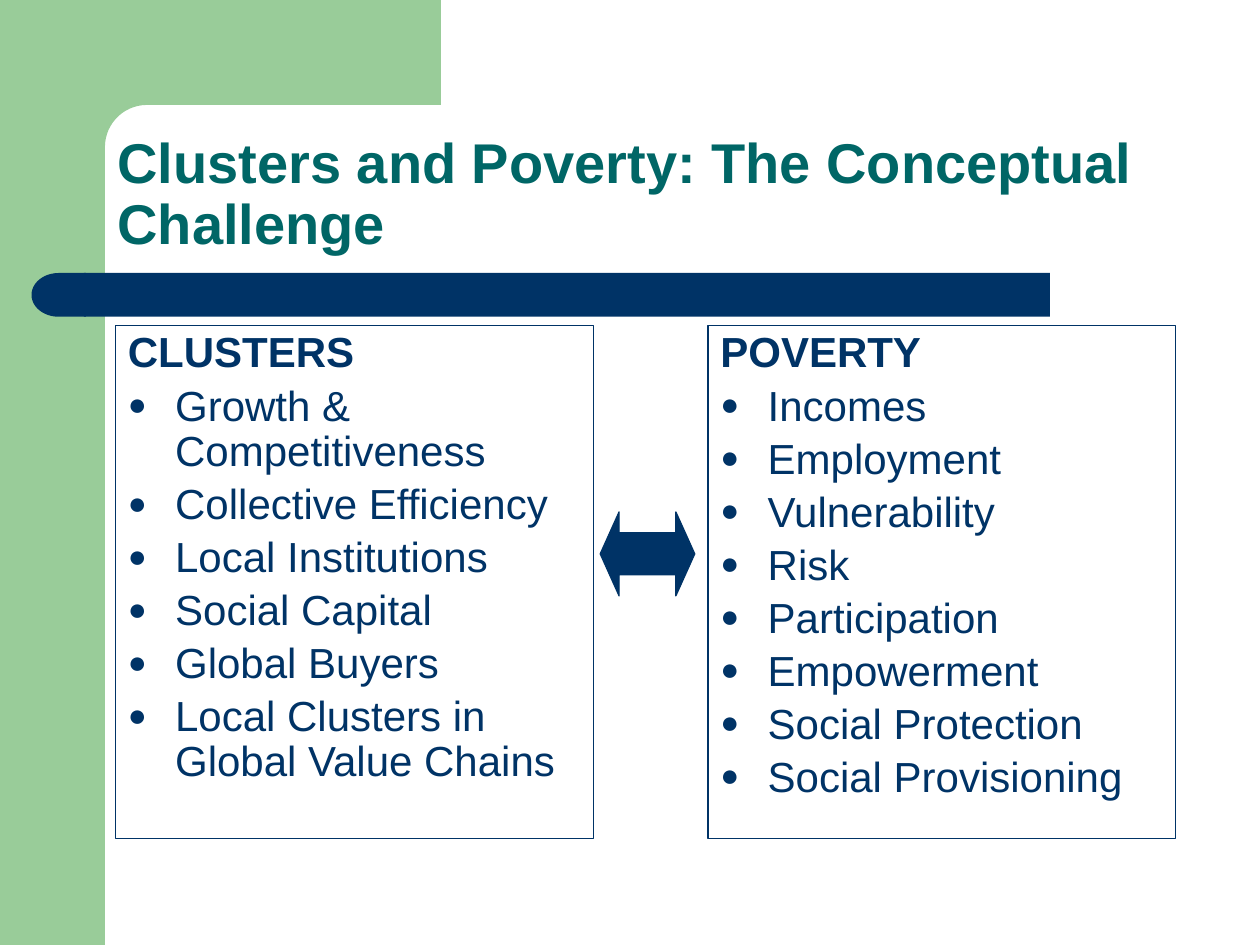
import math

import pptx
import pptx.dml.color
import pptx.enum.shapes
import pptx.enum.text
import pptx.oxml
import pptx.oxml.ns
import pptx.util

Pt = pptx.util.Pt
SHAPE = pptx.enum.shapes.MSO_SHAPE
ANCHOR = pptx.enum.text.MSO_ANCHOR

GREEN, NAVY, TEAL = "99CC99", "003366", "006666"
TITLE = "Clusters and Poverty: The Conceptual Challenge"
COLUMNS = [
    (66, 273, "CLUSTERS", [
        "Growth & Competitiveness", "Collective Efficiency", "Local Institutions",
        "Social Capital", "Global Buyers", "Local Clusters in Global Value Chains"]),
    (404.6, 267, "POVERTY", [
        "Incomes", "Employment", "Vulnerability", "Risk", "Participation",
        "Empowerment", "Social Protection", "Social Provisioning"]),
]
COLUMN_TOP, COLUMN_HEIGHT = 186, 293
INDENT = 27
BAND, CORNER = 60, 24


def color(value):
    return pptx.dml.color.RGBColor.from_string(value)


def paint(shape, fill, line=None):
    shape.shadow.inherit = False
    shape.fill.solid()
    shape.fill.fore_color.rgb = color(fill)
    if line:
        shape.line.color.rgb = color(line)
        shape.line.width = Pt(0.75)
    else:
        shape.line.fill.background()
    return shape


def add_block(page, kind, place, fill, line=None):
    return paint(page.shapes.add_shape(kind, *map(Pt, place)), fill, line)


def add_corner(page):
    center = BAND + CORNER
    angles = [math.radians(degrees) for degrees in range(270, 179, -6)]
    arc = [(center + CORNER * math.cos(angle), center + CORNER * math.sin(angle))
           for angle in angles]
    outline = [(252, 0), (252, BAND), *arc, (BAND, 92), (36, 92)]
    builder = page.shapes.build_freeform(Pt(36), 0)
    builder.add_line_segments([(Pt(x), Pt(y)) for x, y in outline])
    paint(builder.convert_to_shape(), GREEN)


def add_text(page, place, lines, size, ink, anchor):
    box = page.shapes.add_textbox(*map(Pt, place))
    frame = box.text_frame
    frame.word_wrap = True
    frame.vertical_anchor = anchor
    frame.text = "\n".join(lines)
    for para in frame.paragraphs:
        para.line_spacing = 0.9
        for span in para.runs:
            span.font.name = "Arial"
            span.font.size = Pt(size)
            span.font.color.rgb = color(ink)
            span.font.bold = para is frame.paragraphs[0]
    frame.paragraphs[0].font.bold = True
    for span in frame.paragraphs[0].runs:
        span.font.bold = True
    return box


def add_bullet(para):
    namespace = pptx.oxml.ns.nsdecls("a")
    for markup in (
        f'<a:buClr {namespace}><a:srgbClr val="{NAVY}"/></a:buClr>',
        f'<a:buSzPct {namespace} val="75000"/>',
        f'<a:buFont {namespace} typeface="Arial"/>',
        f'<a:buChar {namespace} char="●"/>',
    ):
        para._p.get_or_add_pPr().append(pptx.oxml.parse_xml(markup))


def add_column(page, left, width, heading, items):
    place = (left, COLUMN_TOP, width, COLUMN_HEIGHT)
    box = add_text(page, place, [heading, *items], 24, NAVY, ANCHOR.TOP)
    box.line.color.rgb = color(NAVY)
    box.line.width = Pt(0.75)
    for number, para in enumerate(box.text_frame.paragraphs):
        para.space_before = Pt(4.4)
        properties = para._p.get_or_add_pPr()
        properties.set("marL", str(Pt(INDENT)))
        properties.set("indent", str(-Pt(INDENT)))
        if number:
            add_bullet(para)


def main():
    deck = pptx.Presentation()
    deck.slide_width, deck.slide_height = Pt(720), Pt(540)
    page = deck.slides.add_slide(deck.slide_layouts[6])

    add_block(page, SHAPE.RECTANGLE, (0, 0, BAND, 540), GREEN)
    add_corner(page)
    add_block(page, SHAPE.RECTANGLE, (48, 156, 552, 25), NAVY)
    cap = add_block(page, SHAPE.FLOWCHART_DELAY, (18, 156, 31, 25), NAVY)
    cap.rotation = 180

    add_text(page, (60, 60, 624, 90), [TITLE], 32, TEAL, ANCHOR.BOTTOM)
    for column in COLUMNS:
        add_column(page, *column)

    arrow = add_block(page, SHAPE.LEFT_RIGHT_ARROW, (343, 292.5, 54, 48), NAVY, NAVY)
    arrow.adjustments[0] = 0.5
    arrow.adjustments[1] = 0.225

    deck.save("out.pptx")


if __name__ == "__main__":
    main()
